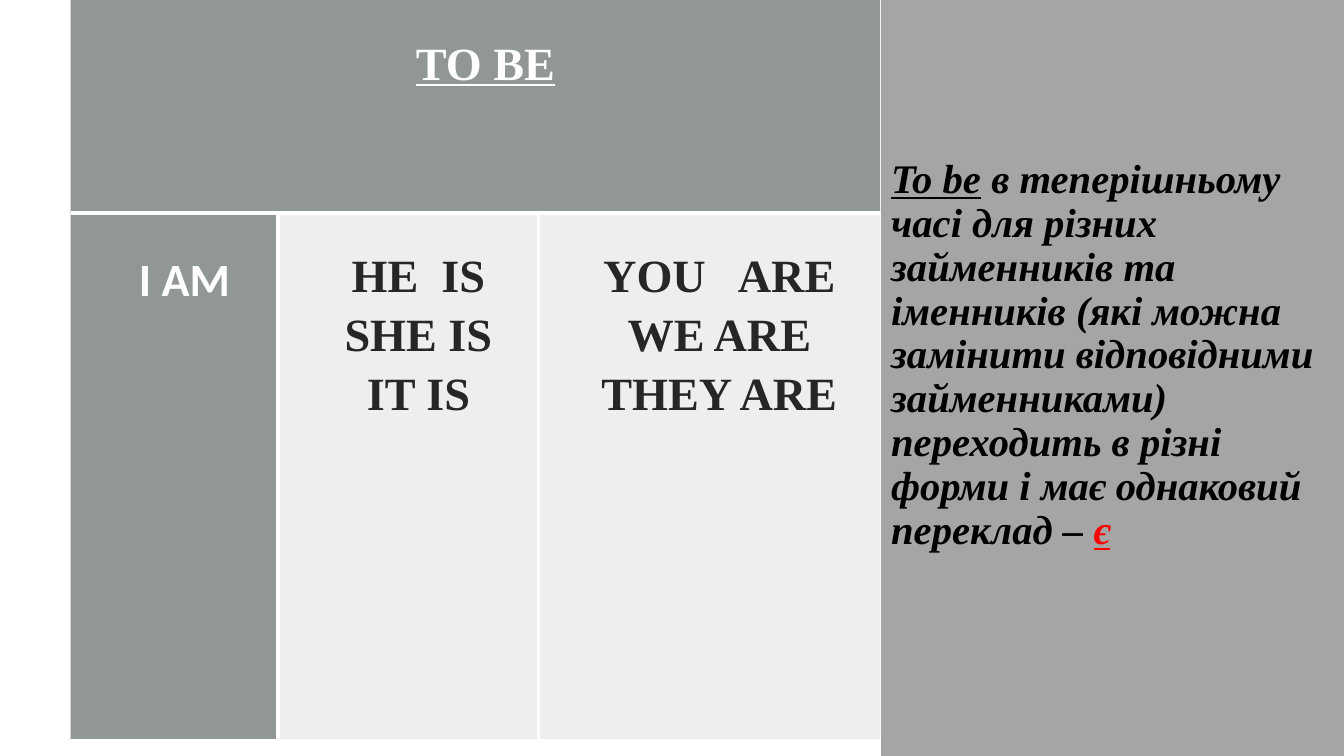
"""Build a slide with a table of the forms of "to be" beside an explanation panel."""
from lxml import etree
from pptx import Presentation
from pptx.dml.color import RGBColor
from pptx.enum.shapes import MSO_SHAPE
from pptx.enum.text import MSO_ANCHOR, PP_ALIGN
from pptx.oxml.ns import qn
from pptx.util import Inches, Pt

RECTANGLE = MSO_SHAPE.RECTANGLE
TOP, MIDDLE = MSO_ANCHOR.TOP, MSO_ANCHOR.MIDDLE
LEFT, CENTER = PP_ALIGN.LEFT, PP_ALIGN.CENTER

COLORS = {"panel": "A5A5A5", "dark": "636B68", "light": "878E8B", "white": "FFFFFF",
          "ink": "262626", "black": "000000", "red": "FF0000"}
SERIF, SANS = "Times New Roman", "Calibri"
PLAIN_TABLE_STYLE = "{2D5ABB26-0587-4C30-8999-92F81FD0307C}"

WIDTH, HEIGHT = 13.33, 7.5
TABLE_LEFT = 0.7
COLUMNS = [2.06, 2.58, 3.39]
ROWS = [2.11, 5.22]
PANEL_LEFT = 8.74
CELL_MARGINS = {"margin_left": 0.51, "margin_top": 0.31, "margin_right": 0.31, "margin_bottom": 0.31}
PANEL_MARGINS = {"margin_left": 0.1, "margin_top": 0.05, "margin_right": 0.1, "margin_bottom": 0.49}
BORDER_POINTS = 3

EXPLANATION = [
    ("To be", "black", True),
    (" в теперішньому часі для різних займенників та іменників (які можна замінити "
     "відповідними займенниками) переходить в різні форми і має однаковий переклад – ", "black", False),
    ("є", "red", True),
]
CELLS = {
    (0, 0): (["TO BE"], SERIF, "white", True, "dark", 70),
    (1, 0): (["I AM"], SANS, "white", False, "dark", 70),
    (1, 1): (["HE  IS", "SHE IS", "IT IS"], SERIF, "ink", False, "light", 15),
    (1, 2): (["YOU   ARE", "WE ARE", "THEY ARE"], SERIF, "ink", False, "light", 15),
}


def color(name):
    return RGBColor.from_string(COLORS[name])


def set_all(target, values):
    for name, value in values.items():
        setattr(target, name, value)


def set_margins(target, margins):
    set_all(target, {name: Inches(value) for name, value in margins.items()})


def add_span(para, text, ink, **format_values):
    span = para.add_run()
    span.text = text
    set_all(span.font, {"bold": True, **format_values})
    span.font.color.rgb = color(ink)


def add_border(cell, side):
    line = etree.SubElement(cell._tc.get_or_add_tcPr(), qn(f"a:ln{side}"), w=str(Pt(BORDER_POINTS)))
    fill = etree.SubElement(line, qn("a:solidFill"))
    etree.SubElement(fill, qn("a:srgbClr"), val=COLORS["white"])


def fill_cell(cell, name, opacity):
    cell.fill.solid()
    cell.fill.fore_color.rgb = color(name)
    tint = cell._tc.tcPr.find(qn("a:solidFill")).find(qn("a:srgbClr"))
    etree.SubElement(tint, qn("a:alpha"), val=str(opacity * 1000))


def inner_sides(row, column):
    if row == 0:
        return ["B"]
    last = len(COLUMNS) - 1
    return ["L"] * (column > 0) + ["R"] * (column < last) + ["T"]


def add_panel(page):
    panel = page.shapes.add_shape(RECTANGLE, Inches(PANEL_LEFT), 0,
                                  Inches(WIDTH - PANEL_LEFT), Inches(HEIGHT))
    panel.shadow.inherit = False
    panel.fill.solid()
    panel.fill.fore_color.rgb = color("panel")
    panel.line.fill.background()
    frame = panel.text_frame
    set_all(frame, {"word_wrap": True, "vertical_anchor": MIDDLE})
    set_margins(frame, PANEL_MARGINS)
    para = frame.paragraphs[0]
    set_all(para, {"alignment": LEFT, "line_spacing": 0.9})
    for text, ink, underline in EXPLANATION:
        add_span(para, text, ink, name=SERIF, size=Pt(29), italic=True, underline=underline)


def add_forms_table(page):
    table = page.shapes.add_table(len(ROWS), len(COLUMNS), Inches(TABLE_LEFT), 0,
                                  Inches(sum(COLUMNS)), Inches(sum(ROWS))).table
    set_all(table, {"first_row": False, "horz_banding": False})
    table._tbl.tblPr.find(qn("a:tableStyleId")).text = PLAIN_TABLE_STYLE
    for column, width in zip(table.columns, COLUMNS):
        column.width = Inches(width)
    for row, height in zip(table.rows, ROWS):
        row.height = Inches(height)
    table.cell(0, 0).merge(table.cell(0, len(COLUMNS) - 1))
    for place, (lines, font, ink, underline, fill, opacity) in CELLS.items():
        cell = table.cell(*place)
        cell.vertical_anchor = TOP
        set_margins(cell, CELL_MARGINS)
        for side in inner_sides(*place):
            add_border(cell, side)
        fill_cell(cell, fill, opacity)
        frame = cell.text_frame
        for index, line in enumerate(lines):
            para = frame.add_paragraph() if index else frame.paragraphs[0]
            set_all(para, {"alignment": CENTER, "line_spacing": 1.15})
            add_span(para, line, ink, name=font, size=Pt(33), underline=underline)


def main():
    deck = Presentation()
    set_all(deck, {"slide_width": Inches(WIDTH), "slide_height": Inches(HEIGHT)})
    page = deck.slides.add_slide(deck.slide_layouts[6])
    add_panel(page)
    add_forms_table(page)
    deck.save("out.pptx")


if __name__ == "__main__":
    main()
